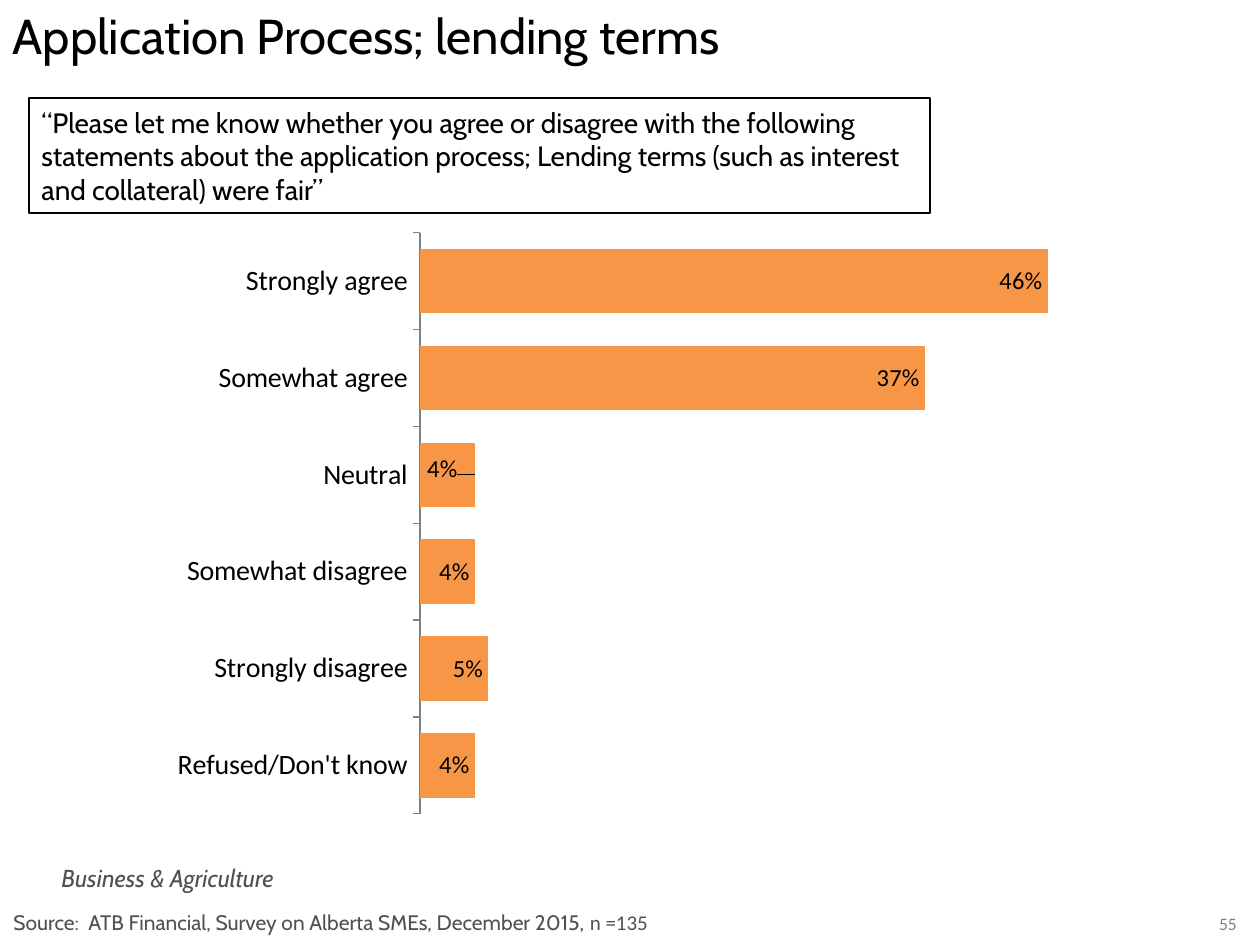
from dataclasses import dataclass
from typing import NamedTuple

from lxml.etree import SubElement
from pptx import Presentation
from pptx.chart.data import CategoryChartData
from pptx.dml.color import RGBColor
from pptx.enum.chart import XL_CHART_TYPE, XL_LABEL_POSITION, XL_TICK_MARK
from pptx.enum.shapes import MSO_SHAPE
from pptx.enum.text import MSO_ANCHOR, PP_ALIGN
from pptx.oxml import parse_xml
from pptx.oxml.ns import nsdecls, qn
from pptx.util import Emu, Pt


@dataclass(frozen=True)
class Theme:
    heading: str = "Cabin"
    data: str = "Calibri"
    black: RGBColor = RGBColor(0, 0, 0)
    text: RGBColor = RGBColor(0x50, 0x51, 0x50)
    grey: RGBColor = RGBColor(0x80, 0x80, 0x80)
    bar: RGBColor = RGBColor(0xF7, 0x96, 0x46)
    title_size: int = 28
    question_size: int = 16
    label_size: int = 14
    source_size: int = 12
    page_size: int = 10


class Box(NamedTuple):
    x: int
    y: int
    w: int
    h: int


class Run(NamedTuple):
    text: str
    font: str


@dataclass(frozen=True)
class Caption:
    box: Box
    runs: tuple[Run, ...]
    size: int
    color: RGBColor
    italic: bool = False
    align: PP_ALIGN = PP_ALIGN.LEFT


THEME = Theme()
PX_PER_INCH = 126

TITLE = "Application Process; lending terms"
QUESTION = (
    "“Please let me know whether you agree or disagree with the following "
    "statements about the application process; Lending terms (such as interest "
    "and collateral) were fair”"
)
CAPTIONS = (
    Caption(Box(49, 857, 354, 43), (Run("Business & Agriculture", THEME.heading),),
            THEME.label_size, THEME.text, italic=True),
    Caption(Box(1, 903, 1173, 38),
            (Run("Source:  ATB Financial, Survey on Alberta SMEs, December 2015, ",
                 THEME.heading),
             Run("n =135", THEME.data)),
            THEME.source_size, THEME.text),
    Caption(Box(1197, 907, 62, 34), (Run("55", THEME.data),),
            THEME.page_size, THEME.grey, align=PP_ALIGN.CENTER),
)
# Bar charts list categories from the bottom up
ANSWERS = {
    "Refused/Don't know": 0.04,
    "Strongly disagree": 0.05,
    "Somewhat disagree": 0.04,
    "Neutral": 0.04,
    "Somewhat agree": 0.37,
    "Strongly agree": 0.46,
}


def px(n: int) -> Emu:
    return Emu(round(n * 914400 / PX_PER_INCH))


def place(box: Box) -> list[Emu]:
    return [px(n) for n in box]


def set_font(font, name: str, size: int, color: RGBColor) -> None:
    font.name = name
    font.size = Pt(size)
    font.color.rgb = color


def add_title(s, box: Box) -> None:
    sp = s.shapes.title
    sp.left, sp.top, sp.width, sp.height = place(box)
    tf = sp.text_frame
    tf.text = TITLE
    tf.vertical_anchor = MSO_ANCHOR.TOP
    p = tf.paragraphs[0]
    p.alignment = PP_ALIGN.LEFT
    set_font(p.font, THEME.heading, THEME.title_size, THEME.black)


def add_question(s, box: Box) -> None:
    sp = s.shapes.add_shape(MSO_SHAPE.RECTANGLE, *place(box))
    sp.shadow.inherit = False
    sp.fill.background()
    sp.line.color.rgb = THEME.black
    sp.line.width = Pt(1)
    tf = sp.text_frame
    tf.word_wrap = True
    tf.text = QUESTION
    p = tf.paragraphs[0]
    p.alignment = PP_ALIGN.LEFT
    set_font(p.font, THEME.heading, THEME.question_size, THEME.black)


def add_caption(s, caption: Caption) -> None:
    tf = s.shapes.add_textbox(*place(caption.box)).text_frame
    tf.word_wrap = True
    p = tf.paragraphs[0]
    p.alignment = caption.align
    p.font.italic = caption.italic
    for run in caption.runs:
        r = p.add_run()
        r.text = run.text
        set_font(r.font, run.font, caption.size, caption.color)


def manual_layout(**values: float):
    """Chart layout from fractions of the chart area."""
    layout = parse_xml(f"<c:layout {nsdecls('c')}><c:manualLayout/></c:layout>")
    for tag, value in values.items():
        SubElement(layout[0], qn(f"c:{tag}")).set("val", str(value))
    return layout


def add_answers(s, box: Box) -> None:
    data = CategoryChartData(number_format="0%")
    data.categories = list(ANSWERS)
    data.add_series("Series 1", list(ANSWERS.values()))
    chart = s.shapes.add_chart(XL_CHART_TYPE.BAR_CLUSTERED, *place(box), data).chart
    chart.has_legend = False
    chart.has_title = False
    set_font(chart.font, THEME.heading, 18, THEME.black)

    # Plot area
    area = chart.plots[0]._element.getparent()
    for old in area.findall(qn("c:layout")):
        area.remove(old)
    area.insert(0, manual_layout(layoutTarget="inner", xMode="edge", yMode="edge",
                                 x=0.36, y=0.05, w=0.567, h=0.945))

    # Axes
    axis = chart.category_axis
    axis.major_tick_mark = XL_TICK_MARK.OUTSIDE
    axis.format.line.color.rgb = THEME.grey
    set_font(axis.tick_labels.font, THEME.data, THEME.question_size, THEME.black)
    scale = chart.value_axis
    scale.minimum_scale, scale.maximum_scale = 0, 0.5
    scale.has_major_gridlines = False
    scale.visible = False

    # Bars and their labels
    plot = chart.plots[0]
    plot.gap_width = 50
    plot.vary_by_categories = False
    series = plot.series[0]
    series.format.fill.solid()
    series.format.fill.fore_color.rgb = THEME.bar
    labels = series.data_labels
    labels.show_value = True
    labels.number_format = "0%"
    labels.number_format_is_linked = False
    labels.position = XL_LABEL_POSITION.INSIDE_END
    set_font(labels.font, THEME.data, THEME.label_size, THEME.black)

    # The Neutral label sits a little up and to the left
    neutral = series.points[list(ANSWERS).index("Neutral")].data_label
    set_font(neutral.font, THEME.data, THEME.label_size, THEME.black)
    neutral.position = XL_LABEL_POSITION.INSIDE_END
    idx = labels._element.find(f"{qn('c:dLbl')}/{qn('c:idx')}")
    idx.addnext(parse_xml(
        f'<c:numFmt {nsdecls("c")} formatCode="0%" sourceLinked="0"/>'))
    idx.addnext(manual_layout(x=-0.01, y=-0.01))


def main() -> None:
    prs = Presentation()
    prs.slide_width, prs.slide_height = px(1260), px(945)
    s = prs.slides.add_slide(prs.slide_layouts[5])
    for caption in CAPTIONS:
        add_caption(s, caption)
    add_title(s, Box(0, -1, 1260, 99))
    add_answers(s, Box(-13, 202, 1203, 615))
    add_question(s, Box(29, 98, 901, 115))
    prs.save("out.pptx")


if __name__ == "__main__":
    main()
